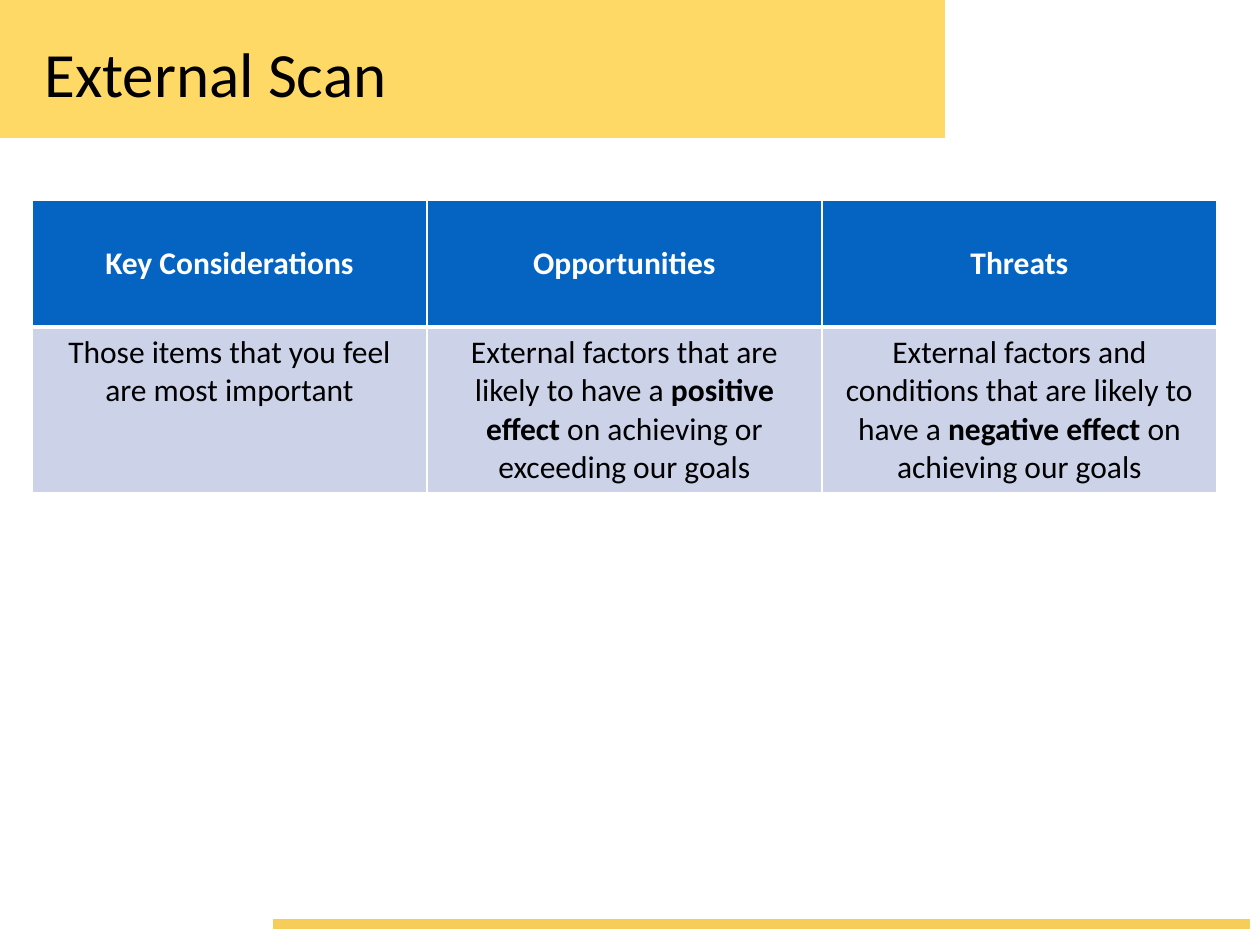
from dataclasses import dataclass
from typing import NamedTuple

from lxml import etree
from pptx import Presentation
from pptx import util as u
from pptx.dml.color import RGBColor
from pptx.enum import shapes, text
from pptx.oxml.ns import qn

SCALE = 914400 / 126  # EMU in one px


@dataclass(frozen=True)
class Theme:
    font: str = "Calibri"
    ink: str = "000000"
    white: str = "FFFFFF"
    band: str = "FFD966"
    rule: str = "F6CD58"
    head: str = "0563C1"
    body: str = "CCD3E9"
    title: int = 36
    cell: int = 18


class Run(NamedTuple):
    words: str
    bold: bool = False


class Column(NamedTuple):
    head: str
    body: list[Run]


THEME = Theme()
COLUMNS = [
    Column("Key Considerations", [Run("Those items that you feel are most important")]),
    Column("Opportunities", [
        Run("External factors that are likely to have a "),
        Run("positive effect ", True),
        Run("on achieving or exceeding our goals"),
    ]),
    Column("Threats", [
        Run("External factors and conditions that are likely to have a "),
        Run("negative effect", True),
        Run(" on achieving our goals"),
    ]),
]


def px(n: int) -> u.Emu:
    return u.Emu(round(n * SCALE))


def rgb(code: str) -> RGBColor:
    return RGBColor.from_string(code)


def write(frame, runs: list[Run], *, size: int, color: str, align=text.PP_ALIGN.LEFT) -> None:
    frame.word_wrap = True
    para = frame.paragraphs[0]
    para.alignment = align
    for item in runs:
        run = para.add_run()
        run.text = item.words
        font = run.font
        font.name, font.size, font.bold = THEME.font, u.Pt(size), item.bold
        font.color.rgb = rgb(color)


def border(cell, **widths: int) -> None:
    """Draw white cell edges; widths are points by side: L, R, T, B."""
    props = cell._tc.get_or_add_tcPr()
    for spot, (side, width) in enumerate(widths.items()):
        edge = etree.Element(qn(f"a:ln{side}"), w=str(u.Pt(width)))
        fill = etree.SubElement(edge, qn("a:solidFill"))
        etree.SubElement(fill, qn("a:srgbClr"), val=THEME.white)
        props.insert(spot, edge)


def fill_cell(cell, runs: list[Run], *, fill: str, color: str, top: int, base: int) -> None:
    cell.fill.solid()
    cell.fill.fore_color.rgb = rgb(fill)
    border(cell, L=1, R=1, T=top, B=base)
    write(cell.text_frame, runs, size=THEME.cell, color=color, align=text.PP_ALIGN.CENTER)


def add_band(slide) -> None:
    band = slide.shapes.add_shape(shapes.MSO_SHAPE.RECTANGLE, 0, 0, px(945), px(138))
    band.shadow.inherit = False
    band.fill.solid()
    band.fill.fore_color.rgb = rgb(THEME.band)
    band.line.fill.background()


def add_rule(slide) -> None:
    rule = slide.shapes.add_connector(
        shapes.MSO_CONNECTOR.STRAIGHT, px(273), px(924), px(1250), px(924))
    rule.line.color.rgb = rgb(THEME.rule)
    rule.line.width = u.Pt(6)
    etree.SubElement(rule._element.spPr, qn("a:effectLst"))


def add_title(slide, words: str) -> None:
    frame = slide.shapes.add_textbox(px(32), px(22), px(1206), px(79)).text_frame
    frame.margin_left = frame.margin_right = u.Inches(0.1)
    frame.margin_top = frame.margin_bottom = u.Inches(0.1)
    write(frame, [Run(words)], size=THEME.title, color=THEME.ink)


def add_grid(slide, columns: list[Column]) -> None:
    wide, heights = 395, (127, 166)
    table = slide.shapes.add_table(
        2, len(columns), px(32), px(200), px(wide * len(columns)), px(sum(heights))).table
    for row, high in zip(table.rows, heights):
        row.height = px(high)
    for i, column in enumerate(columns):
        table.columns[i].width = px(wide)
        head = table.cell(0, i)
        head.vertical_anchor = text.MSO_ANCHOR.MIDDLE
        fill_cell(head, [Run(column.head, True)], fill=THEME.head, color=THEME.white,
                  top=1, base=3)
        fill_cell(table.cell(1, i), column.body, fill=THEME.body, color=THEME.ink,
                  top=3, base=1)


def main() -> None:
    deck = Presentation()
    deck.slide_width, deck.slide_height = px(1260), px(945)
    slide = deck.slides.add_slide(deck.slide_layouts[6])
    # Frame of the page
    add_band(slide)
    add_rule(slide)
    # Content
    add_title(slide, "External Scan")
    add_grid(slide, COLUMNS)
    deck.save("out.pptx")


if __name__ == "__main__":
    main()
